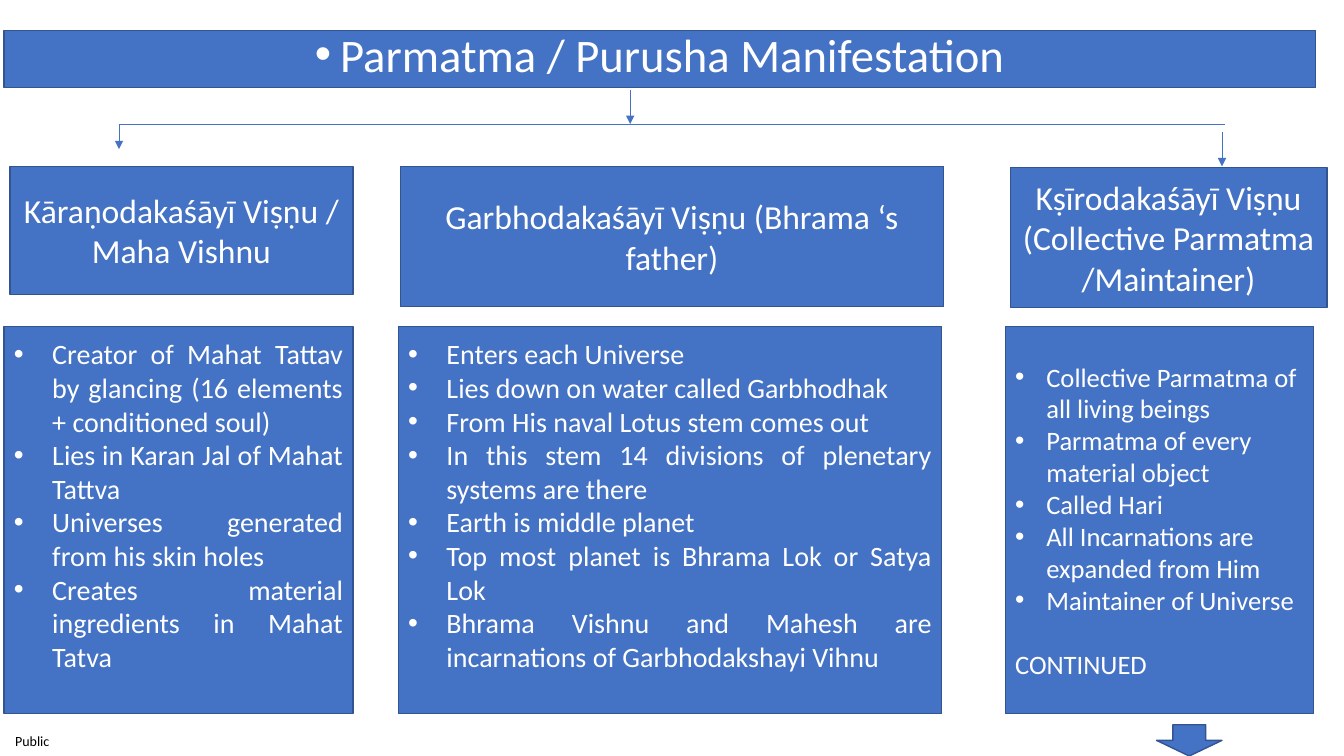
from lxml import etree
from pptx import Presentation
from pptx import util as u
from pptx.dml.color import RGBColor
from pptx.enum import shapes, text
from pptx.oxml import ns

PX = 9144  # 100 px to the inch
COLORS = {"fill": "4472C4", "edge": "325491", "white": "FFFFFF", "black": "000000"}
FONT = "Calibri"
CENTER, JUSTIFY, LEFT = text.PP_ALIGN.CENTER, text.PP_ALIGN.JUSTIFY, text.PP_ALIGN.LEFT

TITLE = "Parmatma / Purusha Manifestation"
TITLE_BOX = (4, 30, 1301, 57)
FOOTER = "Public"
FOOTER_BOX = (0, 721, 64, 29)
CONTINUED = "CONTINUED"
CONTINUED_ARROW = (1147, 719, 65, 31)

BRANCH = (118, 123, 1215, 123)
ARROWS = [(118, 123, 118, 148), (625, 89, 625, 123), (1212, 131, 1212, 165)]

DETAILS_TOP, DETAILS_HEIGHT = 324, 384
MANIFESTATIONS = [
    {
        "heading": ["Kāraṇodakaśāyī Viṣṇu / Maha Vishnu"],
        "heading_box": (10, 165, 340, 127),
        "details": [
            "Creator of Mahat Tattav by glancing (16 elements + conditioned soul)",
            "Lies in Karan Jal of Mahat Tattva",
            "Universes generated from his skin holes",
            "Creates material ingredients in Mahat Tatva",
        ],
        "left": 4, "width": 346, "size": 20, "indent": 38, "align": JUSTIFY,
        "bottom_inset": 35,
    },
    {
        "heading": ["Garbhodakaśāyī Viṣṇu (Bhrama ‘s father)"],
        "heading_box": (397, 165, 539, 139),
        "details": [
            "Enters each Universe",
            "Lies down on water called Garbhodhak",
            "From His naval Lotus stem comes out",
            "In this stem 14 divisions of plenetary systems are there",
            "Earth is middle planet",
            "Top most planet is Bhrama Lok or Satya Lok",
            "Bhrama Vishnu and Mahesh are incarnations of Garbhodakshayi Vihnu",
        ],
        "left": 395, "width": 539, "size": 20, "indent": 38, "align": JUSTIFY,
        "bottom_inset": 35,
    },
    {
        "heading": ["Kṣīrodakaśāyī Viṣṇu", "(Collective Parmatma /Maintainer)"],
        "heading_box": (1002, 166, 314, 139),
        "details": [
            "Collective Parmatma of all living beings",
            "Parmatma of every material object",
            "Called Hari",
            "All Incarnations are expanded from Him",
            "Maintainer of Universe",
        ],
        "left": 997, "width": 306, "size": 19, "indent": 31, "align": LEFT,
        "bottom_inset": 5,
    },
]

prs = Presentation()
prs.slide_width, prs.slide_height = 1333 * PX, 750 * PX
slide = prs.slides.add_slide(prs.slide_layouts[6])


def rgb(name):
    return RGBColor.from_string(COLORS[name])


def px(values):
    return [value * PX for value in values]


def add_block(box, preset=shapes.MSO_SHAPE.RECTANGLE):
    block = slide.shapes.add_shape(preset, *px(box))
    block.shadow.inherit = False
    block.fill.solid()
    block.fill.fore_color.rgb = rgb("fill")
    block.line.color.rgb = rgb("edge")
    block.line.width = u.Pt(1)
    return block


def write(shape, lines, size, align=CENTER, color="white"):
    frame = shape.text_frame
    frame.vertical_anchor = text.MSO_ANCHOR.MIDDLE
    frame.text = "\n".join(lines)
    for paragraph in frame.paragraphs:
        paragraph.alignment = align
        paragraph.font.name = FONT
        paragraph.font.size = u.Pt(size)
        paragraph.font.color.rgb = rgb(color)
    return frame


def add_bullet(paragraph, indent):
    props = paragraph._p.get_or_add_pPr()
    props.set("marL", str(indent * PX))
    props.set("indent", str(-indent * PX))
    bullet_font = etree.Element(ns.qn("a:buFont"), typeface="Arial")
    bullet = etree.Element(ns.qn("a:buChar"), char="•")
    position = len(props.findall(ns.qn("a:lnSpc")) + props.findall(ns.qn("a:spcBef")))
    props.insert(position, bullet_font)
    props.insert(position + 1, bullet)


def add_line(ends, arrow=False):
    line = slide.shapes.add_connector(shapes.MSO_CONNECTOR.STRAIGHT, *px(ends))
    line.line.color.rgb = rgb("fill")
    line.line.width = u.Pt(0.5)
    if arrow:
        etree.SubElement(line.line._get_or_add_ln(), ns.qn("a:tailEnd"), type="triangle")
    etree.SubElement(line._element.spPr, ns.qn("a:effectLst"))


footer = slide.shapes.add_textbox(*px(FOOTER_BOX))
footer_frame = write(footer, [FOOTER], 10, color="black")
footer_frame.margin_left = footer_frame.margin_right = 0
footer_frame.margin_top = footer_frame.margin_bottom = 0

add_line(BRANCH)
for arrow_ends in ARROWS:
    add_line(arrow_ends, arrow=True)

title = write(add_block(TITLE_BOX), [TITLE], 33.3).paragraphs[0]
title.line_spacing = 0.8
title.space_before = u.Pt(10)
add_bullet(title, 25)

for form in MANIFESTATIONS:
    write(add_block(form["heading_box"]), form["heading"], 24)
    details_box = (form["left"], DETAILS_TOP, form["width"], DETAILS_HEIGHT)
    details = write(add_block(details_box), form["details"], form["size"], form["align"])
    details.margin_bottom = form["bottom_inset"] * PX
    for item in details.paragraphs:
        add_bullet(item, form["indent"])

last_form = MANIFESTATIONS[-1]
continued = details.add_paragraph()
continued.text = CONTINUED
continued.alignment = LEFT
continued.space_before = u.Pt(23)
continued.font.name = FONT
continued.font.size = u.Pt(last_form["size"])
continued.font.color.rgb = rgb("white")

add_block(CONTINUED_ARROW, shapes.MSO_SHAPE.DOWN_ARROW)

prs.save("out.pptx")
